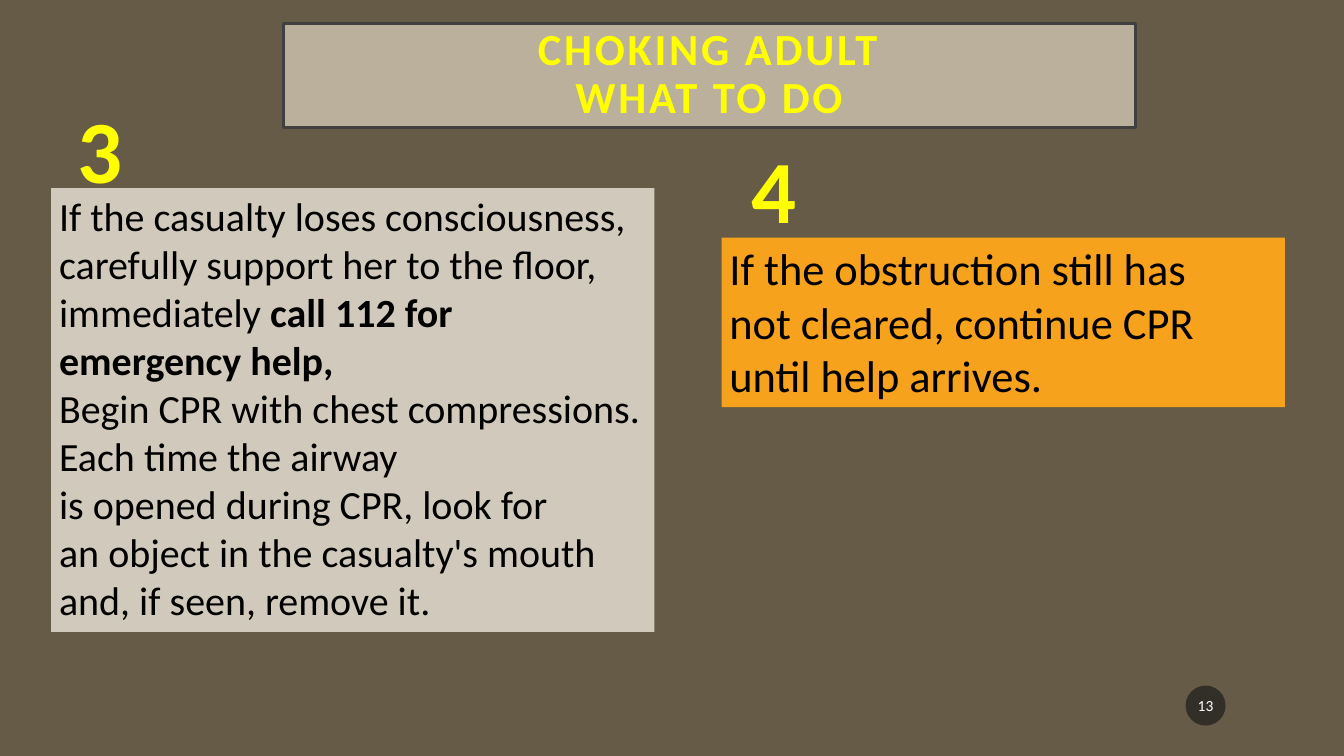
from lxml import etree
from pptx import Presentation
from pptx import util as u
from pptx.dml import color
from pptx.enum import shapes, text
from pptx.oxml import ns

FONT = "Calibri"
YELLOW = "FFFF00"
BLACK = "000000"
CASUALTY_LINES = [
    [("If the casualty loses consciousness,", False)],
    [("carefully support her to the floor,", False)],
    [("immediately ", False), ("call 112 for", True)],
    [("emergency help,", True)],
    [("Begin CPR with chest compressions.", False)],
    [("Each time the airway", False)],
    [("is opened during CPR, look for", False)],
    [("an object in the casualty's mouth", False)],
    [("and, if seen, remove it.", False)],
]
OBSTRUCTION_LINES = [
    [("If the obstruction still has", False)],
    [("not cleared, continue CPR", False)],
    [("until help arrives.", False)],
]


def rgb(value):
    return color.RGBColor.from_string(value)


def set_fill(obj, value):
    obj.fill.solid()
    obj.fill.fore_color.rgb = rgb(value)


def set_attrs(obj, values):
    for name, value in values.items():
        setattr(obj, name, value)


def place(sp, box):
    names = ("left", "top", "width", "height")
    set_attrs(sp, dict(zip(names, map(u.Inches, box))))


def set_font(font, size, value, bold=False):
    set_attrs(font, {"name": FONT, "size": u.Pt(size), "bold": bold})
    font.color.rgb = rgb(value)


def add_title(s, title, box):
    sp = s.shapes.title
    place(sp, box)
    set_fill(sp, "BAB09B")
    sp.line.color.rgb = rgb("404040")
    sp.line.width = u.Pt(2.5)
    tf = sp.text_frame
    tf.text = title
    margins = ("margin_left", "margin_top", "margin_right", "margin_bottom")
    set_attrs(tf, dict.fromkeys(margins, u.Inches(0.2)))
    set_attrs(tf, {"vertical_anchor": text.MSO_ANCHOR.MIDDLE,
                   "auto_size": text.MSO_AUTO_SIZE.NONE, "word_wrap": True})
    p = tf.paragraphs[0]
    set_attrs(p, {"alignment": text.PP_ALIGN.CENTER, "line_spacing": 0.9})
    for r in p.runs:
        set_font(r.font, 40, YELLOW, True)
        r.font._element.set("spc", "250")


def add_text(s, lines, box, size, value, fill=None, wrap=False):
    sp = s.shapes.add_textbox(*map(u.Inches, box))
    if fill:
        set_fill(sp, fill)
    tf = sp.text_frame
    set_attrs(tf, {"word_wrap": wrap,
                   "auto_size": text.MSO_AUTO_SIZE.SHAPE_TO_FIT_TEXT})
    for i, line in enumerate(lines):
        p = tf.add_paragraph() if i else tf.paragraphs[0]
        for words, bold in line:
            r = p.add_run()
            r.text = words
            set_font(r.font, size, value, bold)


def add_page_number(s, number, box):
    sp = s.shapes.add_shape(shapes.MSO_SHAPE.OVAL, *map(u.Inches, box))
    sp.shadow.inherit = False
    sp.line.fill.background()
    set_fill(sp, "1D1D1D")
    clr = sp._element.spPr.find(ns.qn("a:solidFill"))[0]
    etree.SubElement(clr, ns.qn("a:alpha"), val="70000")
    tf = sp.text_frame
    tf.text = number
    set_attrs(tf, {"margin_left": u.Inches(0.02), "margin_right": u.Inches(0.02),
                   "vertical_anchor": text.MSO_ANCHOR.MIDDLE, "word_wrap": True})
    p = tf.paragraphs[0]
    p.alignment = text.PP_ALIGN.CENTER
    set_font(p.runs[0].font, 13.9, "FFFFFF")


def main():
    prs = Presentation()
    set_attrs(prs, {"slide_width": u.Inches(16.8), "slide_height": u.Inches(9.45)})
    s = prs.slides.add_slide(prs.slide_layouts[5])
    set_fill(s.background, "655B46")
    add_title(s, "CHOKING ADULT\vWHAT TO DO", (3.54, 0.29, 10.65, 1.3))
    add_text(s, CASUALTY_LINES, (0.64, 2.35, 7.54, 5.55), 36, BLACK, "D1CABC")
    add_text(s, OBSTRUCTION_LINES, (9.02, 2.97, 7.04, 2.12), 40, BLACK, "F6A21D", True)
    for step, left, top in (("3", 0.87, 1.13), ("4", 9.29, 1.63)):
        add_text(s, [[(step, True)]], (left, top, 0.77, 1.45), 80, YELLOW)
    add_page_number(s, "13", (14.82, 8.57, 0.5, 0.5))
    prs.save("out.pptx")


if __name__ == "__main__":
    main()
